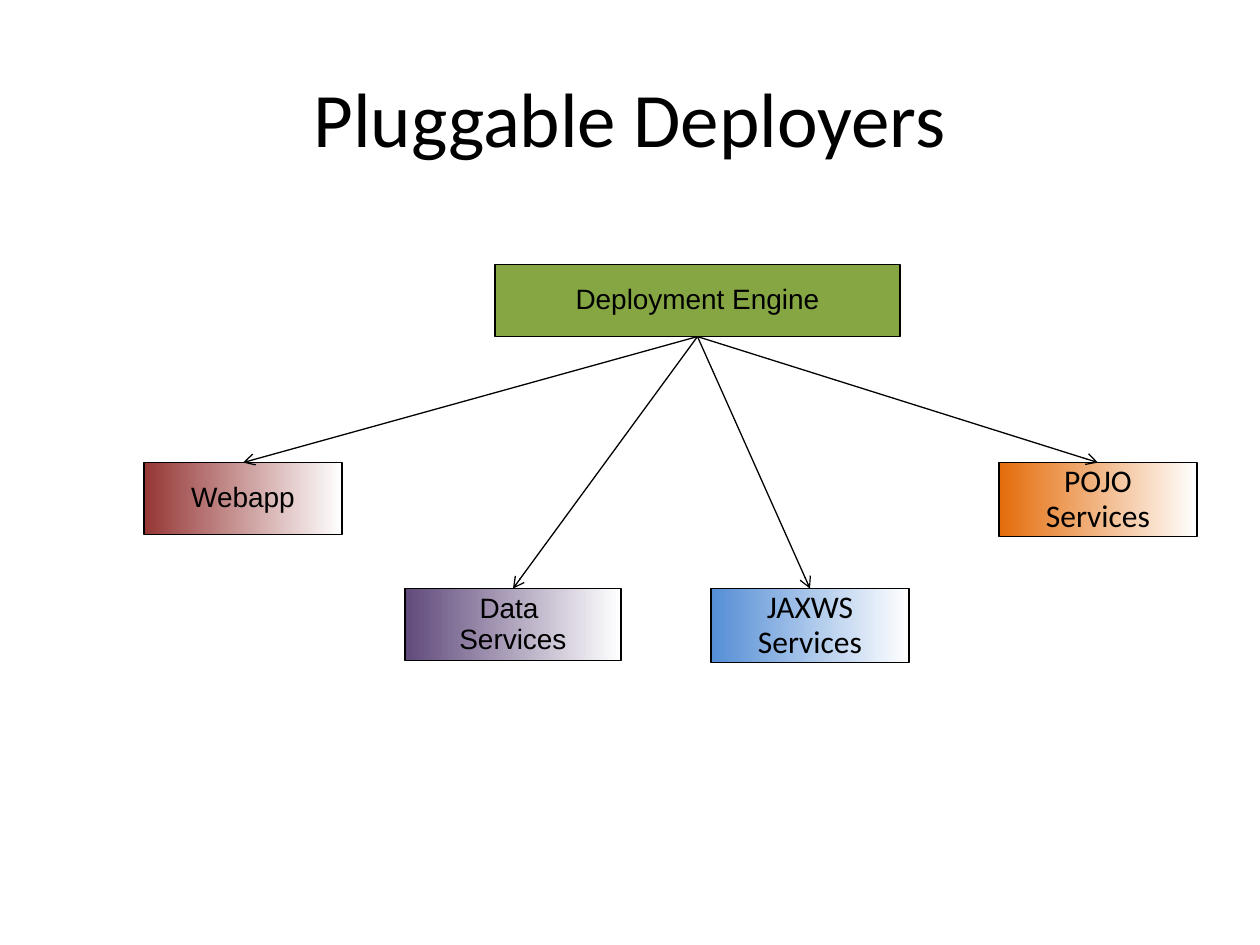
import pptx
import pptx.util
import pptx.dml.color
import pptx.enum.shapes
import pptx.enum.text
import pptx.oxml
import pptx.oxml.ns

COLORS = {
    "ink": "000000",
    "fade": "FFFFFF",
    "engine": "86A644",
    "webapp": "953735",
    "data": "604A7B",
    "pojo": "E46C0A",
    "jaxws": "558ED5",
}
BOTTOM, TOP = 2, 0
ARIAL = {"name": "Arial", "size": pptx.util.Pt(16)}
CALIBRI = {"name": "Calibri", "size": pptx.util.Pt(18)}
HEADING = {"name": "Calibri", "size": pptx.util.Pt(44)}


def rgb(key):
    return pptx.dml.color.RGBColor.from_string(COLORS[key])


class DeployerSlide:
    COLUMNS = 14
    LINE = pptx.util.Pt(0.75)

    def __init__(self, deck):
        self.cell = deck.slide_width / self.COLUMNS
        self.slide = deck.slides.add_slide(deck.slide_layouts[6])

    def grid(self, *cells):
        return [round(count * self.cell) for count in cells]

    def label(self, frame, lines, font, spacing=1.0, side=0.09):
        margins = {
            "word_wrap": True,
            "vertical_anchor": pptx.enum.text.MSO_ANCHOR.MIDDLE,
            "margin_left": pptx.util.Inches(side),
            "margin_right": pptx.util.Inches(side),
            "margin_top": pptx.util.Inches(0.05),
            "margin_bottom": pptx.util.Inches(0.05),
        }
        for key, value in margins.items():
            setattr(frame, key, value)
        frame.text = "\n".join(lines)
        for paragraph in frame.paragraphs:
            paragraph.alignment = pptx.enum.text.PP_ALIGN.CENTER
            paragraph.line_spacing = spacing
            for run in paragraph.runs:
                for key, value in font.items():
                    setattr(run.font, key, value)
                run.font.color.rgb = rgb("ink")

    def title(self, text, *cells):
        heading = self.slide.shapes.add_textbox(*self.grid(*cells))
        self.label(heading.text_frame, [text], HEADING, side=0.1)

    def box(self, lines, cells, color, font, fades=True):
        component = self.slide.shapes.add_shape(
            pptx.enum.shapes.MSO_SHAPE.RECTANGLE, *self.grid(*cells))
        component.shadow.inherit = False
        if fades:
            component.fill.gradient()
            component.fill.gradient_angle = 0
            for stop, key, position in zip(
                    component.fill.gradient_stops, (color, "fade"), (0, 1)):
                stop.color.rgb = rgb(key)
                stop.position = position
        else:
            component.fill.solid()
            component.fill.fore_color.rgb = rgb(color)
        component.line.color.rgb = rgb("ink")
        component.line.width = self.LINE
        self.label(component.text_frame, lines, font, spacing=0.93)
        return component

    def arrow(self, source, target):
        link = self.slide.shapes.add_connector(
            pptx.enum.shapes.MSO_CONNECTOR.STRAIGHT, 0, 0, 0, 0)
        link.begin_connect(source, BOTTOM)
        link.end_connect(target, TOP)
        link.line.color.rgb = rgb("ink")
        link.line.width = self.LINE
        namespace = pptx.oxml.ns.nsdecls("a")
        outline = link._element.spPr.find(pptx.oxml.ns.qn("a:ln"))
        outline.append(pptx.oxml.parse_xml(
            f'<a:tailEnd {namespace} type="arrow"/>'))
        link._element.spPr.append(
            pptx.oxml.parse_xml(f"<a:effectLst {namespace}/>"))


def main():
    deck = pptx.Presentation()
    deck.slide_width = pptx.util.Inches(10)
    deck.slide_height = pptx.util.Inches(7.5)
    slide = DeployerSlide(deck)

    slide.title("Pluggable Deployers", 0.7, 0.42, 12.6, 1.75)
    engine = slide.box(["Deployment Engine"], (5.5, 2.94, 4.5, 0.8),
                       "engine", ARIAL, fades=False)
    upper, lower = 5.14, 6.54
    deployers = [
        slide.box(lines, cells, color, font)
        for lines, cells, color, font in (
            (["Webapp"], (1.6, upper, 2.2, 0.8), "webapp", ARIAL),
            (["Data ", "Services"], (4.5, lower, 2.4, 0.8), "data", ARIAL),
            (["POJO Services"], (11.1, upper, 2.2, 0.82), "pojo", CALIBRI),
            (["JAXWS", "Services"], (7.9, lower, 2.2, 0.82), "jaxws", CALIBRI),
        )
    ]
    for deployer in deployers:
        slide.arrow(engine, deployer)

    deck.save("out.pptx")


if __name__ == "__main__":
    main()
